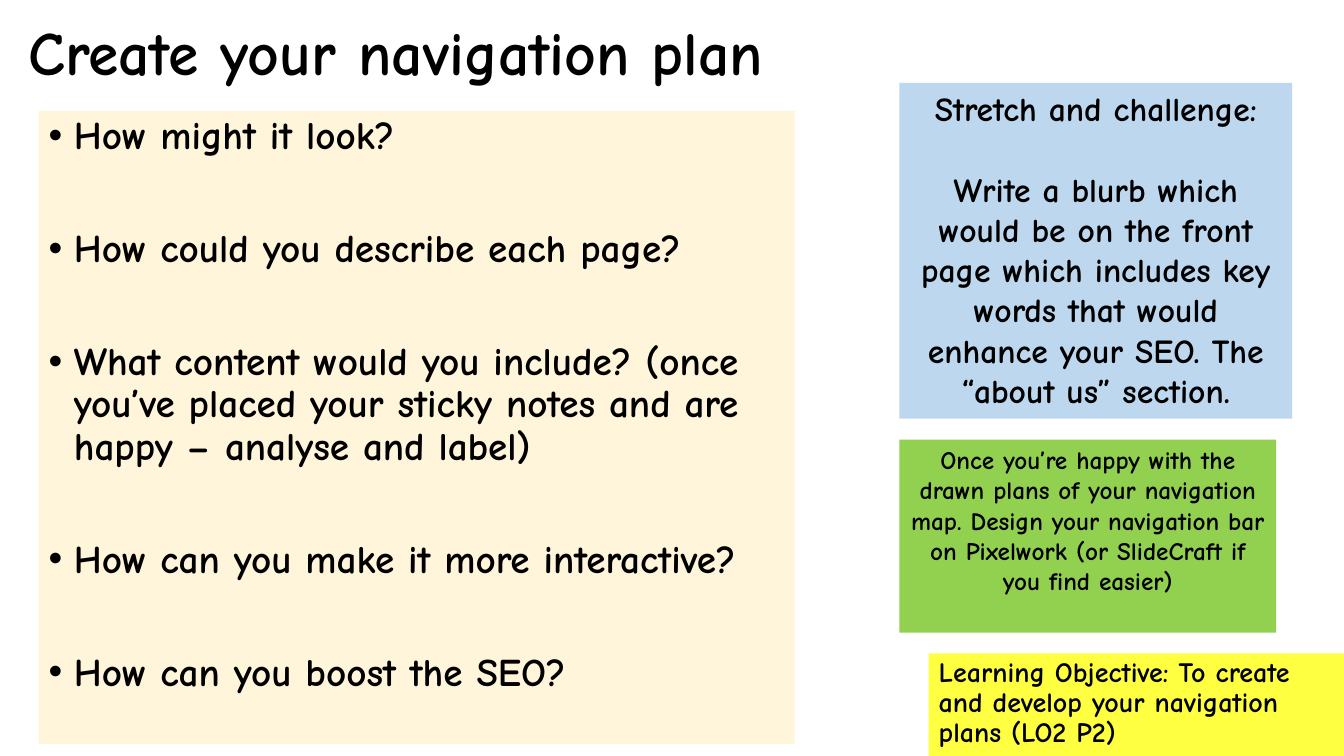
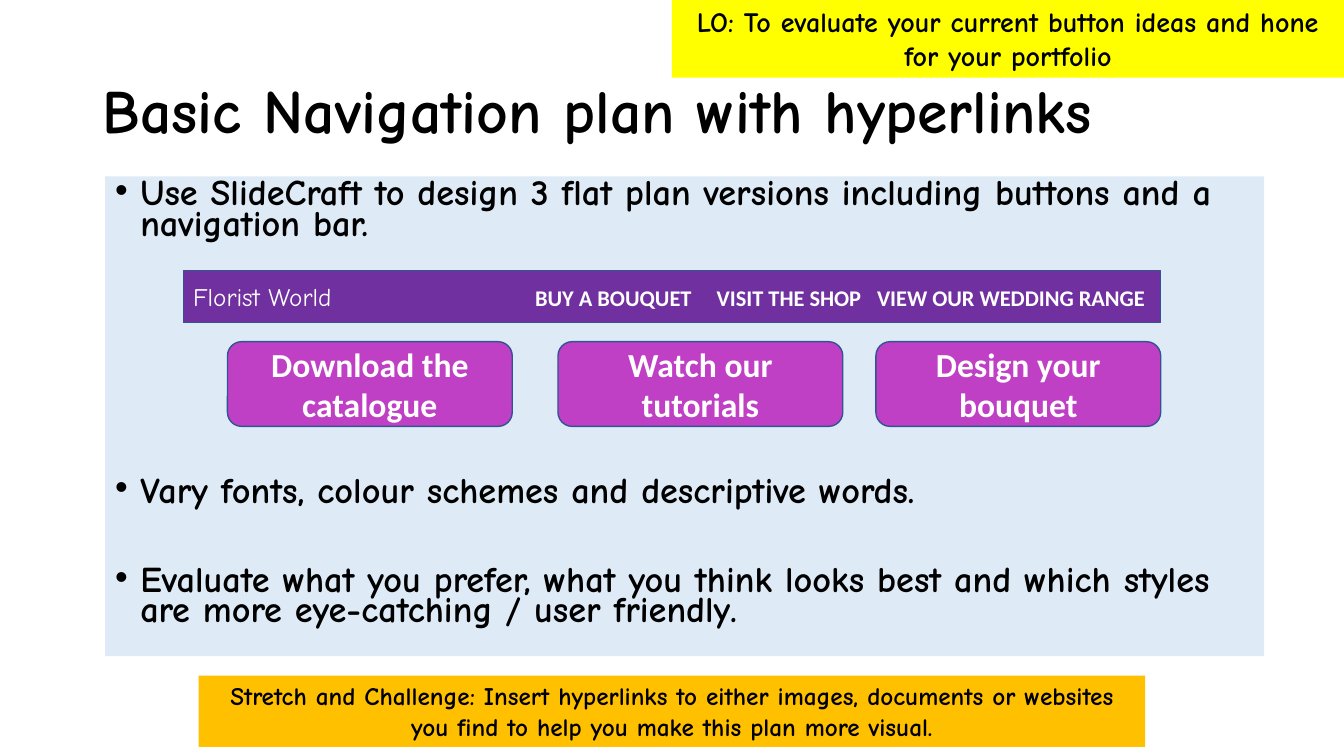
"""Build two lesson slides about navigation plans."""
from dataclasses import dataclass

from lxml import etree
from pptx import Presentation
from pptx.dml.color import RGBColor
from pptx.enum.shapes import MSO_SHAPE
from pptx.enum.text import MSO_ANCHOR, MSO_AUTO_SIZE, PP_ALIGN
from pptx.oxml.ns import qn
from pptx.util import Pt

LEFT, CENTER = PP_ALIGN.LEFT, PP_ALIGN.CENTER
TOP, MIDDLE = MSO_ANCHOR.TOP, MSO_ANCHOR.MIDDLE
FIXED_SIZE = MSO_AUTO_SIZE.NONE
RECTANGLE, ROUNDED = MSO_SHAPE.RECTANGLE, MSO_SHAPE.ROUNDED_RECTANGLE

COLORS = {
    "black": "000000",
    "white": "FFFFFF",
    "cream": "FFF2CC",
    "yellow": "FFFF00",
    "sky": "BDD7EE",
    "pale blue": "DEEBF7",
    "green": "92D050",
    "amber": "FFC000",
    "purple": "7030A0",
    "magenta": "BF40C4",
    "outline": "325491",
}
LESSON_FONT, BUTTON_FONT = "Comic Neue", "Calibri"
TITLE_SIZE = 44
TITLE_EXTENT = (828, 104.4)
BULLET_INDENT = 18


@dataclass(frozen=True)
class Span:
    text: str
    size: float
    color: str = "black"
    font: str = LESSON_FONT
    bold: bool = True


@dataclass(frozen=True)
class Para:
    spans: tuple[Span, ...]
    align: PP_ALIGN = LEFT
    before: float = 0
    spacing: float = 1.0
    bullet: bool = False
    tabs: tuple[float, ...] = ()


@dataclass(frozen=True)
class Panel:
    area: tuple[float, float, float, float]
    fill: str
    paras: tuple[Para, ...]
    alpha: int = 100
    outlined: bool = False
    shape: MSO_SHAPE = RECTANGLE
    anchor: MSO_ANCHOR = TOP


@dataclass(frozen=True)
class Lesson:
    title: str
    title_corner: tuple[float, float]
    body: Panel
    panels: tuple[Panel, ...]


def place(box, area: tuple[float, float, float, float]) -> None:
    """Move and size a box."""
    box.left, box.top, box.width, box.height = map(Pt, area)


def paint(box, panel: Panel) -> None:
    """Apply the fill, its transparency and the outline."""
    box.fill.solid()
    box.fill.fore_color.rgb = RGBColor.from_string(COLORS[panel.fill])
    if panel.alpha < 100:
        color = box._element.spPr.find(".//" + qn("a:srgbClr"))
        etree.SubElement(color, qn("a:alpha"), val=str(panel.alpha * 1000))
    if panel.outlined:
        box.line.color.rgb = RGBColor.from_string(COLORS["outline"])
        box.line.width = Pt(1)
    else:
        box.line.fill.background()


def format_para(para, style: Para) -> None:
    """Set alignment, spacing, bullet and tab stops."""
    para.alignment = style.align
    para.line_spacing = style.spacing
    para.space_before = Pt(style.before)
    para.space_after = Pt(0)
    properties = para._p.get_or_add_pPr()
    if style.bullet:
        properties.set("marL", str(Pt(BULLET_INDENT)))
        properties.set("indent", str(-Pt(BULLET_INDENT)))
        etree.SubElement(properties, qn("a:buFont"), typeface="Arial")
        etree.SubElement(properties, qn("a:buChar"), char="•")
    if style.tabs:
        stops = etree.SubElement(properties, qn("a:tabLst"))
        for stop in style.tabs:
            etree.SubElement(stops, qn("a:tab"), pos=str(Pt(stop)), algn="l")


def write(box, paras: tuple[Para, ...], anchor: MSO_ANCHOR) -> None:
    """Write paragraphs into a box run by run."""
    frame = box.text_frame
    frame.word_wrap = True
    frame.auto_size = FIXED_SIZE
    frame.vertical_anchor = anchor
    for index, style in enumerate(paras):
        para = frame.add_paragraph() if index else frame.paragraphs[0]
        format_para(para, style)
        for span in style.spans:
            run = para.add_run()
            run.text = span.text
            run.font.name = span.font
            run.font.size = Pt(span.size)
            run.font.bold = span.bold
            run.font.color.rgb = RGBColor.from_string(COLORS[span.color])


def draw_panel(page, panel: Panel) -> None:
    """Draw a filled shape with its text."""
    box = page.shapes.add_shape(panel.shape, *map(Pt, panel.area))
    box.shadow.inherit = False
    paint(box, panel)
    write(box, panel.paras, panel.anchor)


def draw_lesson(deck, lesson: Lesson) -> None:
    """Add one lesson slide."""
    page = deck.slides.add_slide(deck.slide_layouts[1])
    title, body = page.shapes.title, page.placeholders[1]
    place(title, lesson.title_corner + TITLE_EXTENT)
    write(title, (Para((Span(lesson.title, TITLE_SIZE),), spacing=0.9),), MIDDLE)
    place(body, lesson.body.area)
    paint(body, lesson.body)
    write(body, lesson.body.paras, lesson.body.anchor)
    for panel in lesson.panels:
        draw_panel(page, panel)


def bullets(items: tuple[tuple[str, float], ...], size: float,
            spacing: float) -> tuple[Para, ...]:
    """Make bulleted paragraphs from texts and the gaps above them."""
    return tuple(Para((Span(text, size),), before=gap, spacing=spacing, bullet=True)
                 for text, gap in items)


def centered(text: str, size: float, before: float = 0) -> Para:
    """Make a centred paragraph in the lesson font."""
    return Para((Span(text, size),), CENTER, before)


def button(left: float, label: str) -> Panel:
    """Make one rounded navigation button."""
    span = Span(label, 24, "white", BUTTON_FONT)
    return Panel((left, 244.1, 203.4, 60.5), "magenta", (Para((span,), CENTER),),
                 outlined=True, shape=ROUNDED, anchor=MIDDLE)


QUESTION_GAP = 50.4
QUESTIONS = (
    ("How might it look?", 0),
    ("How could you describe each page?", QUESTION_GAP),
    ("What content would you include? (once you’ve placed your sticky notes "
     "and are happy – analyse and label)", QUESTION_GAP),
    ("How can you make it more interactive?", QUESTION_GAP),
    ("How can you boost the SEO?", QUESTION_GAP),
)
TASKS = (
    ("Use SlideCraft to design 3 flat plan versions including buttons and a "
     "navigation bar.", 0),
    ("Vary fonts, colour schemes and descriptive words.", 168.8),
    ("Evaluate what you prefer, what you think looks best and which styles are "
     "more eye-catching / user friendly.", 41.8),
)
NAVIGATION_BAR = Para(
    (Span("Florist World", 18, "white", bold=False),)
    + tuple(Span("\t" + label, 16, "white", BUTTON_FONT)
            for label in ("BUY A BOUQUET", "VISIT THE SHOP", "VIEW OUR WEDDING RANGE")),
    tabs=(244.3, 374, 488.5),
)
BUTTONS = ((162.5, "Download the catalogue"), (398.6, "Watch our tutorials"),
           (625.7, "Design your bouquet"))

LESSONS = (
    Lesson(
        "Create your navigation plan", (13, -12.2),
        Panel((27.6, 79.2, 540, 452.2), "cream", bullets(QUESTIONS, 28, 0.9), alpha=72),
        (
            Panel((663.4, 466.7, 296.6, 73.3), "yellow",
                  (Para((Span("Learning Objective: To create and develop your "
                              "navigation plans (LO2 P2)", 20),), spacing=0.9),),
                  alpha=74),
            Panel((642.4, 59.2, 280.6, 239.8), "sky",
                  (centered("Stretch and challenge:", 24),
                   centered("Write a blurb which would be on the front page which "
                            "includes key words that would enhance your SEO. The "
                            "“about us” section.", 24, 28.8))),
            Panel((642.4, 314, 269.2, 138), "green",
                  (centered("Once you’re happy with the drawn plans of your "
                            "navigation map. Design your navigation bar on "
                            "Pixelwork (or SlideCraft if you find easier)", 18),)),
        ),
    ),
    Lesson(
        "Basic Navigation plan with hyperlinks", (66.2, 28.8),
        Panel((75, 126, 828, 342.7), "pale blue", bullets(TASKS, 25.9, 0.7)),
        (
            Panel((130.9, 193, 698, 37.4), "purple", (NAVIGATION_BAR,),
                  outlined=True, anchor=MIDDLE),
            *(button(left, label) for left, label in BUTTONS),
            Panel((480, 0, 480, 55.5), "yellow",
                  (centered("LO: To evaluate your current button ideas and hone "
                            "for your portfolio", 20),)),
            Panel((142, 482.6, 676, 51), "amber",
                  (centered("Stretch and Challenge: Insert hyperlinks to either "
                            "images, documents or websites you find to help you "
                            "make this plan more visual.", 18),)),
        ),
    ),
)


def main() -> None:
    """Build and save the deck."""
    deck = Presentation()
    deck.slide_width, deck.slide_height = Pt(960), Pt(540)
    for lesson in LESSONS:
        draw_lesson(deck, lesson)
    deck.save("out.pptx")


if __name__ == "__main__":
    main()
